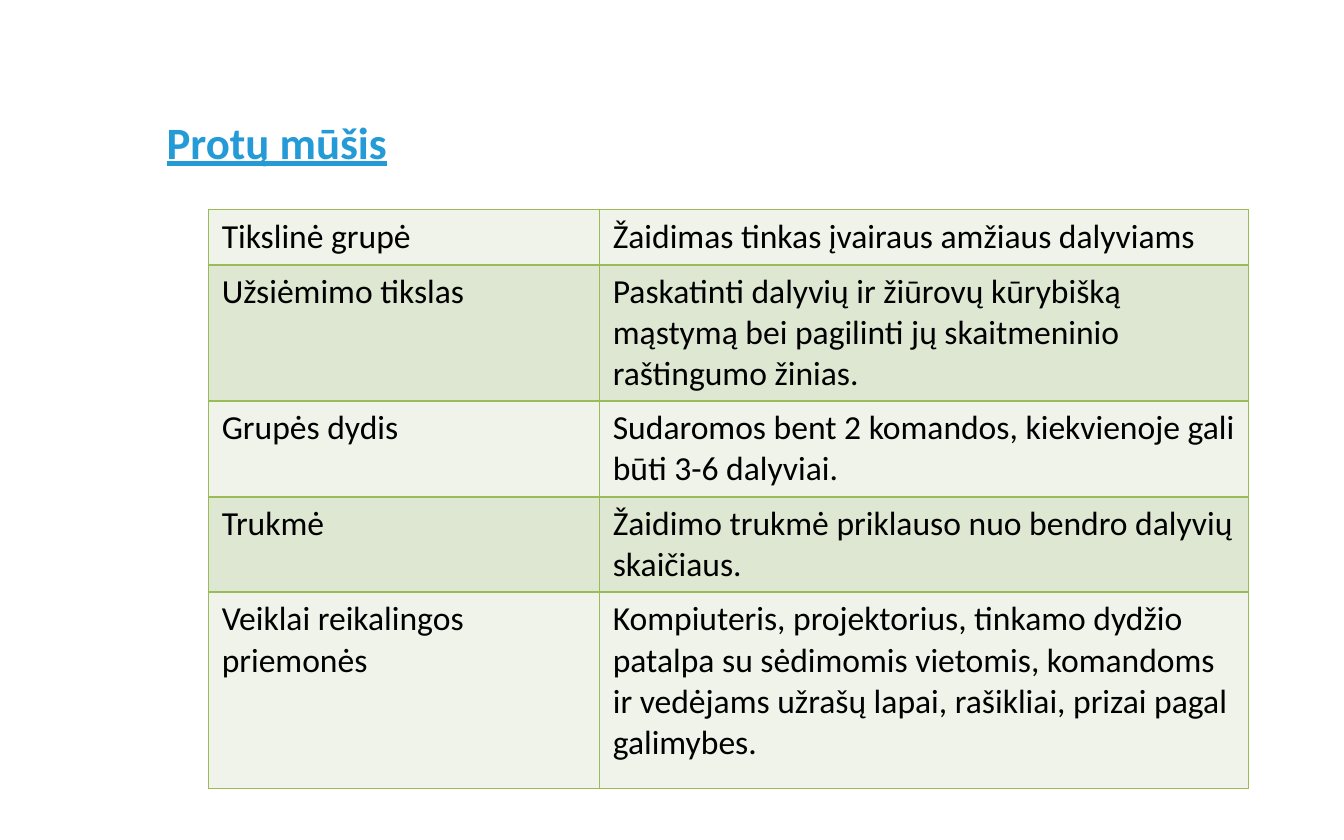
from lxml import etree
from pptx import Presentation
from pptx.dml.color import RGBColor
from pptx.enum.text import MSO_ANCHOR, PP_ALIGN
from pptx.oxml.ns import qn
from pptx.util import Inches, Pt

MIDDLE = MSO_ANCHOR.MIDDLE
LEFT = PP_ALIGN.LEFT

COLORS = {"title": "249BD7", "text": "000000", "line": "9BBB59",
          "light": "EFF3EA", "dark": "DEE7D1"}
TITLE = {"name": "Calibri", "size": Pt(24), "bold": True, "underline": True}
BODY = {"name": "Calibri", "size": Pt(18), "bold": False}

ROWS = [
    (0.41, "Tikslinė grupė", "Žaidimas tinkas įvairaus amžiaus dalyviams"),
    (1.01, "Užsiėmimo tikslas",
     "Paskatinti dalyvių ir žiūrovų kūrybišką mąstymą bei pagilinti jų "
     "skaitmeninio raštingumo žinias."),
    (0.71, "Grupės dydis",
     "Sudaromos bent 2 komandos, kiekvienoje gali būti 3-6 dalyviai."),
    (0.71, "Trukmė", "Žaidimo trukmė priklauso nuo bendro dalyvių skaičiaus."),
    (1.46, "Veiklai reikalingos priemonės",
     "Kompiuteris, projektorius, tinkamo dydžio patalpa su sėdimomis vietomis, "
     "komandoms ir vedėjams užrašų lapai, rašikliai, prizai pagal galimybes."),
]
WIDTHS = [2.91, 4.83]


def write(frame, text, style, color):
    para = frame.paragraphs[0]
    para.alignment = LEFT
    run = para.add_run()
    run.text = text
    for key, value in style.items():
        setattr(run.font, key, value)
    run.font.color.rgb = RGBColor.from_string(COLORS[color])


def border(cell):
    props = cell._tc.get_or_add_tcPr()
    for side in ("lnL", "lnR", "lnT", "lnB"):
        line = etree.SubElement(props, qn(f"a:{side}"), w=str(Pt(1)))
        fill = etree.SubElement(line, qn("a:solidFill"))
        etree.SubElement(fill, qn("a:srgbClr"), val=COLORS["line"])


deck = Presentation()
deck.slide_width, deck.slide_height = Inches(10), Inches(6.25)
slide = deck.slides.add_slide(deck.slide_layouts[5])

# Title
title = slide.shapes.title
title.left, title.top = Inches(1.14), Inches(0.53)
title.width, title.height = Inches(8.29), Inches(1.04)
title.text_frame.vertical_anchor = MIDDLE
write(title.text_frame, "Protų mūšis", TITLE, "title")

# Activity table
table = slide.shapes.add_table(
    len(ROWS), len(WIDTHS), Inches(1.55), Inches(1.56),
    Inches(sum(WIDTHS)), Inches(sum(row[0] for row in ROWS))).table
table.first_row = False
table.horz_banding = False
for col, width in zip(table.columns, WIDTHS):
    col.width = Inches(width)

for r, (height, *texts) in enumerate(ROWS):
    table.rows[r].height = Inches(height)
    for c, text in enumerate(texts):
        cell = table.cell(r, c)
        border(cell)
        cell.fill.solid()
        shade = "dark" if r % 2 else "light"
        cell.fill.fore_color.rgb = RGBColor.from_string(COLORS[shade])
        write(cell.text_frame, text, BODY, "text")

deck.save("out.pptx")
